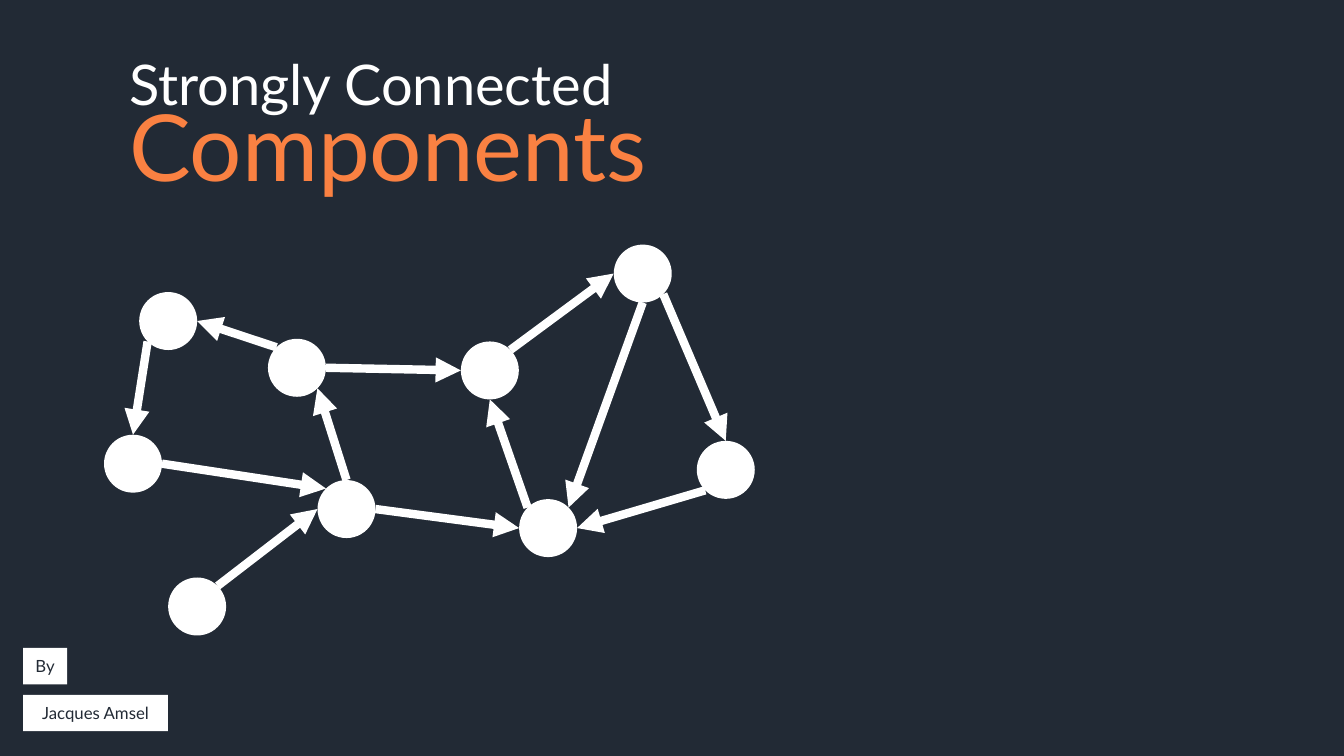
import math
from dataclasses import dataclass
from enum import IntEnum

import pptx
import pptx.dml.color
import pptx.enum.shapes
import pptx.enum.text
import pptx.oxml
import pptx.util

Pt = pptx.util.Pt
RGB = pptx.dml.color.RGBColor
Align = pptx.enum.text.PP_ALIGN
Anchor = pptx.enum.text.MSO_ANCHOR
Preset = pptx.enum.shapes.MSO_SHAPE


@dataclass(frozen=True)
class Theme:
    font: str = "Lato"
    dark: RGB = RGB(0x22, 0x2A, 0x35)
    light: RGB = RGB(0xFF, 0xFF, 0xFF)
    orange: RGB = RGB(0xFA, 0x81, 0x42)
    pink: RGB = RGB(0xFF, 0x40, 0x88)
    title: float = 40
    subtitle: float = 66
    label: float = 12
    edge: float = 6


class Site(IntEnum):
    """Connection sites of an ellipse, counted anticlockwise from the top."""
    TOP = 0
    TOP_LEFT = 1
    LEFT = 2
    BOTTOM_LEFT = 3
    BOTTOM = 4
    BOTTOM_RIGHT = 5
    RIGHT = 6
    TOP_RIGHT = 7


@dataclass(frozen=True)
class Node:
    name: str
    left: float
    top: float


@dataclass(frozen=True)
class Edge:
    start: str
    start_site: Site
    end: str
    end_site: Site


@dataclass(frozen=True)
class Label:
    text: str
    top: float
    width: float


THEME = Theme()
NODE_SIZE = 41.4
LABEL_LEFT, LABEL_HEIGHT = 16.5, 26

NODES = [
    Node("upper left", 99.4, 208.6),
    Node("far left", 74.3, 310.5),
    Node("inner left", 191.4, 242),
    Node("base", 226.8, 342.9),
    Node("bottom", 120.1, 412.5),
    Node("middle", 329.2, 243.9),
    Node("lower right", 370.8, 356.5),
    Node("top right", 438.4, 174.7),
    Node("far right", 497.7, 314.9),
]
EDGES = [
    Edge("inner left", Site.TOP_LEFT, "upper left", Site.RIGHT),
    Edge("upper left", Site.BOTTOM_LEFT, "far left", Site.TOP),
    Edge("far left", Site.RIGHT, "base", Site.TOP_LEFT),
    Edge("base", Site.TOP, "inner left", Site.BOTTOM_RIGHT),
    Edge("bottom", Site.TOP_RIGHT, "base", Site.LEFT),
    Edge("inner left", Site.RIGHT, "middle", Site.LEFT),
    Edge("base", Site.RIGHT, "lower right", Site.LEFT),
    Edge("lower right", Site.TOP_LEFT, "middle", Site.BOTTOM),
    Edge("middle", Site.TOP_RIGHT, "top right", Site.LEFT),
    Edge("top right", Site.BOTTOM, "lower right", Site.TOP_RIGHT),
    Edge("top right", Site.BOTTOM_RIGHT, "far right", Site.TOP),
    Edge("far right", Site.BOTTOM_LEFT, "lower right", Site.RIGHT),
]
LABELS = [Label("By", 462.8, 31.5), Label("Jacques Amsel", 496.3, 103.5)]


def place(sp, left: float, top: float, width: float, height: float) -> None:
    sp.left, sp.top, sp.width, sp.height = map(Pt, (left, top, width, height))


def write(sp, text: str, *, size: float, color: RGB, color_end: RGB | None = None,
          align=Align.LEFT, anchor=Anchor.TOP, wrap: bool = True) -> None:
    """Fill a shape with one line; color_end makes a left-to-right gradient."""
    tf = sp.text_frame
    tf.auto_size = pptx.enum.text.MSO_AUTO_SIZE.NONE
    tf.word_wrap, tf.vertical_anchor = wrap, anchor
    tf.margin_left = tf.margin_right = Pt(7.2)
    tf.margin_top = tf.margin_bottom = Pt(3.6)
    p = tf.paragraphs[0]
    p.alignment, p.space_before, p.line_spacing = align, Pt(0), 1.0
    r = p.add_run()
    r.text = text
    r.font.name, r.font.size = THEME.font, Pt(size)
    if color_end is None:
        r.font.color.rgb = color
    else:
        r.font.fill.gradient()
        r.font.fill.gradient_angle = 0
        for stop, rgb in zip(r.font.fill.gradient_stops, (color, color_end)):
            stop.color.rgb = rgb


def add_plain(s, preset: Preset, left: float, top: float, width: float, height: float):
    sp = s.shapes.add_shape(preset, *map(Pt, (left, top, width, height)))
    sp.shadow.inherit = False
    sp.fill.solid()
    sp.fill.fore_color.rgb = THEME.light
    sp.line.fill.background()
    return sp


def site_point(sp, site: Site) -> tuple[int, int]:
    angle = math.radians(90 + 45 * site)
    return (round(sp.left + sp.width / 2 * (1 + math.cos(angle))),
            round(sp.top + sp.height / 2 * (1 - math.sin(angle))))


def add_edge(s, edge: Edge, circles: dict) -> None:
    """Draw an arrow glued to the ellipse sites, of which there are eight."""
    start, end = circles[edge.start], circles[edge.end]
    c = s.shapes.add_connector(pptx.enum.shapes.MSO_CONNECTOR.STRAIGHT, 0, 0, 0, 0)
    c.begin_connect(start, 0)
    c.end_connect(end, 0)
    c.begin_x, c.begin_y = site_point(start, edge.start_site)
    c.end_x, c.end_y = site_point(end, edge.end_site)
    for tag, site in (("stCxn", edge.start_site), ("endCxn", edge.end_site)):
        c._element.xpath(f".//a:{tag}")[0].set("idx", str(int(site)))
    c.line.color.rgb, c.line.width = THEME.light, Pt(THEME.edge)
    ns = pptx.oxml.ns.qn
    c.line._get_or_add_ln().append(
        pptx.oxml.xmlchemy.OxmlElement("a:tailEnd"))
    c._element.spPr.find(ns("a:ln")).find(ns("a:tailEnd")).set("type", "triangle")
    c._element.spPr.append(pptx.oxml.xmlchemy.OxmlElement("a:effectLst"))


def main() -> None:
    prs = pptx.Presentation()
    prs.slide_width, prs.slide_height = Pt(960), Pt(540)
    s = prs.slides.add_slide(prs.slide_layouts[0])
    s.background.fill.solid()
    s.background.fill.fore_color.rgb = THEME.dark

    title, subtitle = s.shapes.title, s.placeholders[1]
    place(title, 85, 31.7, 427.7, 55.4)
    write(title, "Strongly Connected", size=THEME.title, color=THEME.light, wrap=False)
    place(subtitle, 85, 59.8, 415.4, 87.1)
    write(subtitle, "Components", size=THEME.subtitle,
          color=THEME.orange, color_end=THEME.pink)

    for label in LABELS:
        sp = add_plain(s, Preset.RECTANGLE, LABEL_LEFT, label.top, label.width, LABEL_HEIGHT)
        write(sp, label.text, size=THEME.label, color=THEME.dark,
              align=Align.CENTER, anchor=Anchor.MIDDLE)

    circles = {n.name: add_plain(s, Preset.OVAL, n.left, n.top, NODE_SIZE, NODE_SIZE)
               for n in NODES}
    for edge in EDGES:
        add_edge(s, edge, circles)

    prs.save("out.pptx")


if __name__ == "__main__":
    main()
